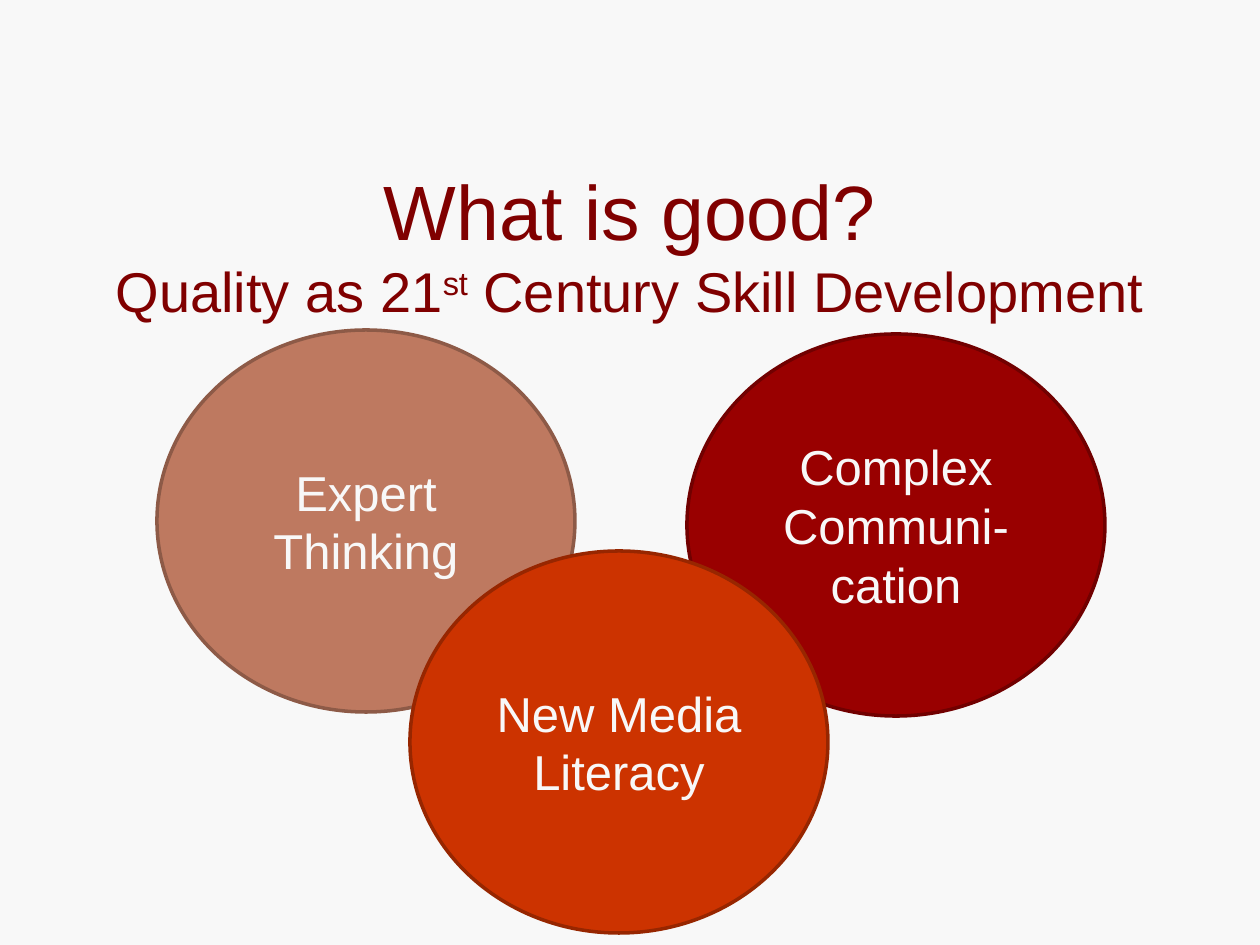
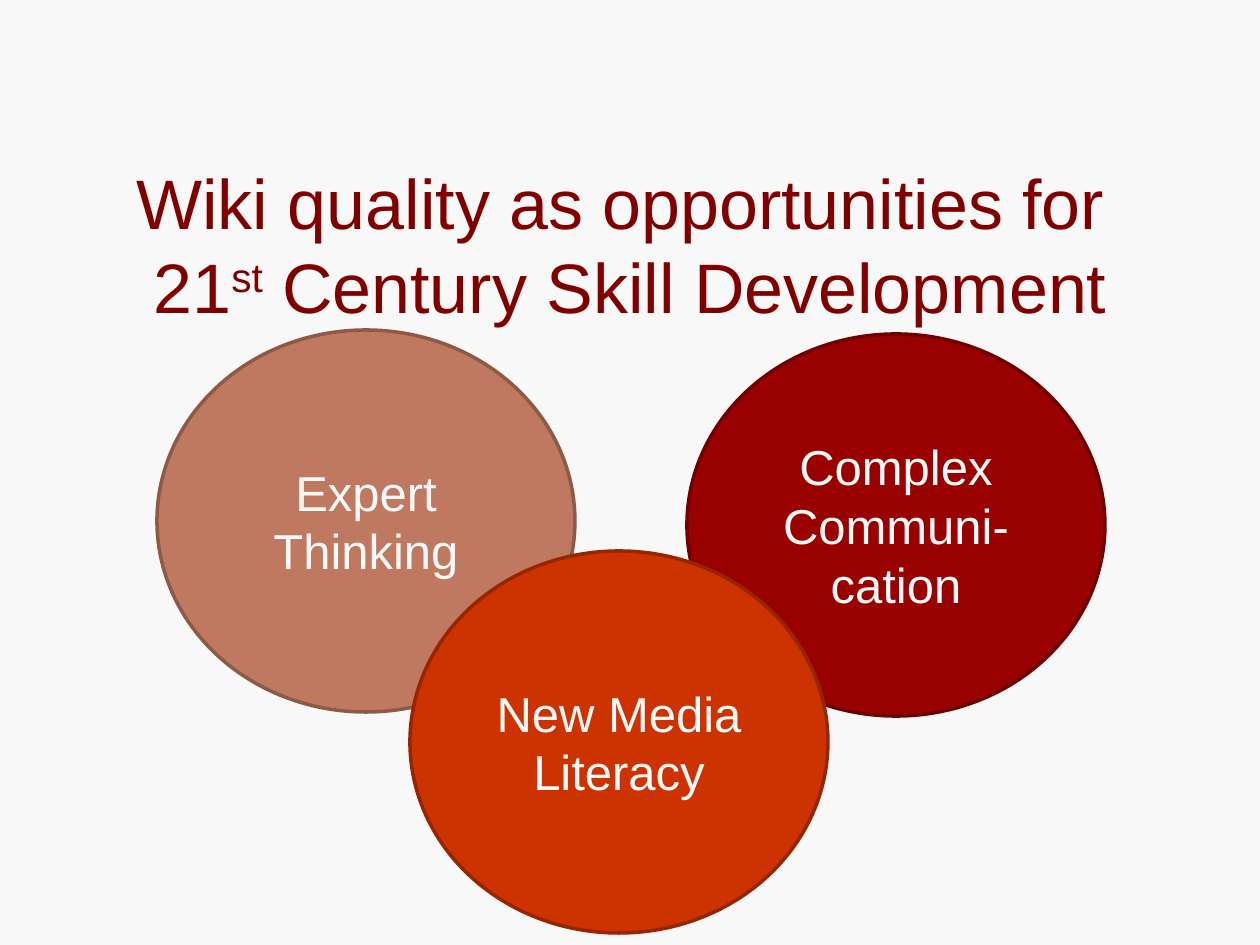
import pptx
import pptx.dml.color
import pptx.enum.shapes
import pptx.enum.text
import pptx.util
from dataclasses import dataclass

EMU_PER_PX = 914400 / 126


@dataclass(frozen=True)
class Theme:
    font: str = "Arial"
    background: str = "F8F8F8"
    title: str = "800000"
    label: str = "F8F8F8"
    label_size: int = 28
    outline_width: int = 2


THEME = Theme()

# Skill circles: label, left, top, fill, outline
CIRCLE_SIZE = (418, 382)
SKILLS = [
    ("Expert Thinking", 157, 330, "BE7960", "8D5A47"),
    ("Complex Communi-cation", 687, 334, "990000", "710000"),
    ("New Media Literacy", 410, 551, "CC3300", "972600"),
]

# Titles: lines of (text, size, is superscript)
TITLES = [
    [
        [("What is good?", 44, False)],
        [("Quality as 21", 32, False), ("st", 32, True),
         (" Century Skill Development", 32, False)],
    ],
    [
        [("Wiki quality as opportunities for ", 40, False)],
        [("21", 40, False), ("st", 40, True),
         (" Century Skill Development", 40, False)],
    ],
]


def px(length):
    return pptx.util.Emu(round(length * EMU_PER_PX))


def rgb(color):
    return pptx.dml.color.RGBColor.from_string(color)


def format_run(run, size, color):
    run.font.name = THEME.font
    run.font.size = pptx.util.Pt(size)
    run.font.color.rgb = rgb(color)


def center_text(text_frame):
    text_frame.word_wrap = True
    text_frame.vertical_anchor = pptx.enum.text.MSO_ANCHOR.MIDDLE
    paragraph = text_frame.paragraphs[0]
    paragraph.alignment = pptx.enum.text.PP_ALIGN.CENTER
    return paragraph


def add_title(slide, lines):
    shape = slide.shapes.add_textbox(px(63), px(158), px(1134), px(158))
    text_frame = shape.text_frame
    paragraph = center_text(text_frame)
    # Uneven insets seat the two lines just above the circles
    text_frame.margin_top, text_frame.margin_bottom = px(13), px(0)
    for index, line in enumerate(lines):
        if index:
            paragraph.add_line_break()
        for text, size, is_superscript in line:
            run = paragraph.add_run()
            run.text = text
            format_run(run, size, THEME.title)
            if is_superscript:
                run.font._element.set("baseline", "30000")


def add_skill_circle(slide, label, left, top, fill, outline):
    width, height = CIRCLE_SIZE
    shape = slide.shapes.add_shape(
        pptx.enum.shapes.MSO_SHAPE.OVAL, px(left), px(top), px(width), px(height))
    shape.shadow.inherit = False
    shape.fill.solid()
    shape.fill.fore_color.rgb = rgb(fill)
    shape.line.color.rgb = rgb(outline)
    shape.line.width = pptx.util.Pt(THEME.outline_width)
    paragraph = center_text(shape.text_frame)
    paragraph.text = label
    format_run(paragraph.runs[0], THEME.label_size, THEME.label)


def add_skills_slide(presentation, title_lines):
    slide = presentation.slides.add_slide(presentation.slide_layouts[6])
    slide.background.fill.solid()
    slide.background.fill.fore_color.rgb = rgb(THEME.background)
    add_title(slide, title_lines)
    for skill in SKILLS:
        add_skill_circle(slide, *skill)


def main():
    presentation = pptx.Presentation()
    presentation.slide_width, presentation.slide_height = px(1260), px(945)
    for title_lines in TITLES:
        add_skills_slide(presentation, title_lines)
    presentation.save("out.pptx")


if __name__ == "__main__":
    main()
